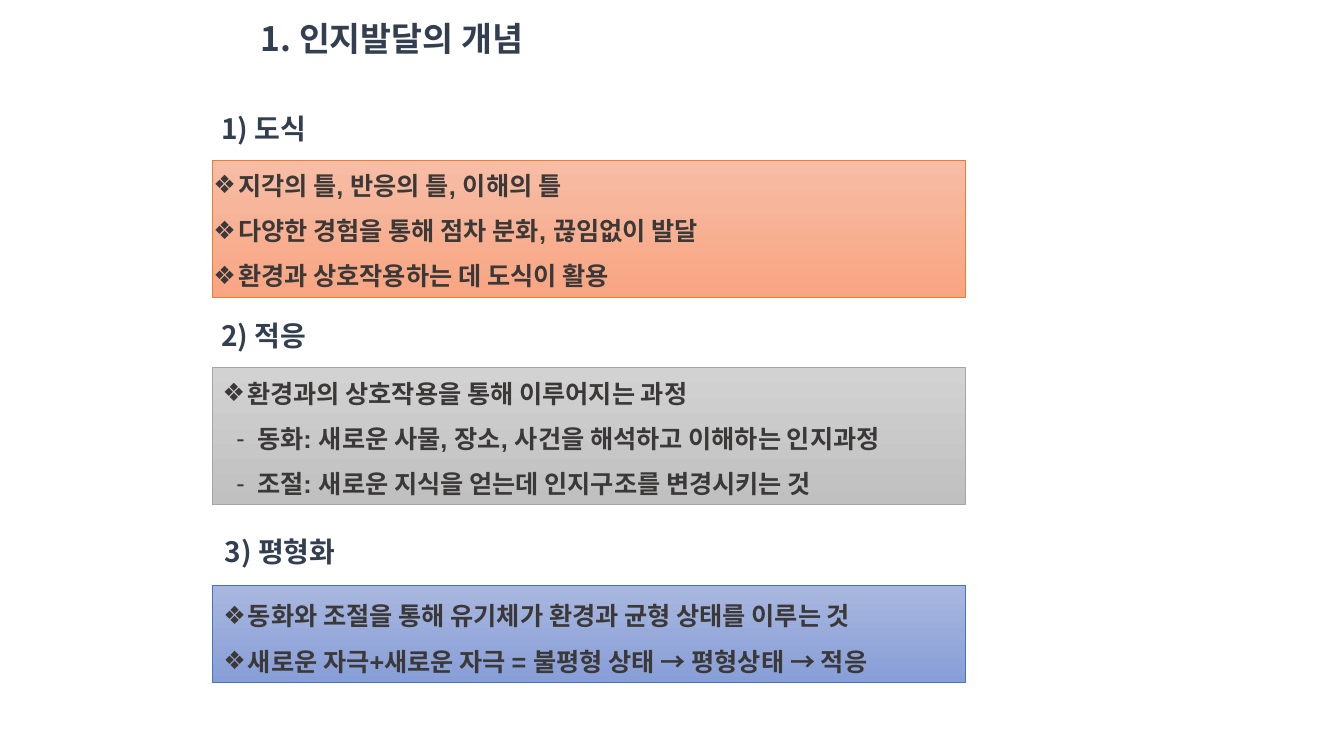
from lxml import etree
from pptx import Presentation
from pptx.dml.color import RGBColor
from pptx.enum.shapes import MSO_SHAPE
from pptx.enum.text import MSO_AUTO_SIZE
from pptx.oxml.ns import qn
from pptx.util import Cm, Pt

NAVY = RGBColor(0x33, 0x3F, 0x50)
CHARCOAL = RGBColor(0x3B, 0x38, 0x38)
ORANGE = RGBColor(0xED, 0x7D, 0x31)
ORANGE_TOP = RGBColor(0xF7, 0xBD, 0xA5)
ORANGE_END = RGBColor(0xF8, 0xA5, 0x82)
GRAY = RGBColor(0xA5, 0xA5, 0xA5)
GRAY_TOP = RGBColor(0xD2, 0xD2, 0xD2)
GRAY_END = RGBColor(0xC0, 0xC0, 0xC0)
BLUE = RGBColor(0x44, 0x72, 0xC4)
BLUE_TOP = RGBColor(0xA8, 0xB7, 0xDF)
BLUE_END = RGBColor(0x88, 0x9E, 0xD7)
KOREAN = "Noto Sans CJK KR"

# Bullet character: (text indent, hanging width) in cm
BULLETS = {"❖": (0.62, 0.62), "-": (0.87, 0.52)}


def add_text(left, top, width, height, lines, size, color, font):
    """Add a bold text box; each line is a (bullet or None, text) pair."""
    tb = s.shapes.add_textbox(Cm(left), Cm(top), Cm(width), Cm(height))
    tf = tb.text_frame
    tf.word_wrap = True
    tf.auto_size = MSO_AUTO_SIZE.SHAPE_TO_FIT_TEXT
    tf.text = "\n".join(text for _, text in lines)
    for p, (bullet, _) in zip(tf.paragraphs, lines):
        if bullet:
            p.line_spacing = 1.5
            set_bullet(p, bullet)
        r = p.runs[0]
        r.font.size = Pt(size)
        r.font.bold = True
        r.font.name = font
        r.font.color.rgb = color
        etree.SubElement(r.font._element, qn("a:ea"), typeface=KOREAN)


def set_bullet(p, char):
    indent, hanging = BULLETS[char]
    pPr = p._p.get_or_add_pPr()
    pPr.set("marL", str(Cm(indent)))
    pPr.set("indent", str(-Cm(hanging)))
    etree.SubElement(pPr, qn("a:buFont"), typeface="Arial")
    etree.SubElement(pPr, qn("a:buChar"), char=char)


prs = Presentation()
prs.slide_width, prs.slide_height = Cm(33.87), Cm(19.05)
s = prs.slides.add_slide(prs.slide_layouts[6])

add_text(6.32, 0.33, 16.2, 1.27, [(None, "1. 인지발달의 개념")], 24, NAVY, KOREAN)

# Heading and its place, panel top and height, text place and height, colours, lines
sections = [
    ("1) 도식", 5.33, 2.69, 4.04, 3.45, 5.13, 3.78, 3.71,
     (ORANGE, ORANGE_TOP, ORANGE_END),
     [("❖", "지각의 틀, 반응의 틀, 이해의 틀"),
      ("❖", "다양한 경험을 통해 점차 분화, 끊임없이 발달"),
      ("❖", "환경과 상호작용하는 데 도식이 활용")]),
    ("2) 적응", 5.33, 7.9, 9.27, 3.45, 5.36, 9.02, 3.71,
     (GRAY, GRAY_TOP, GRAY_END),
     [("❖", "환경과의 상호작용을 통해 이루어지는 과정"),
      ("-", "동화: 새로운 사물, 장소, 사건을 해석하고 이해하는 인지과정"),
      ("-", "조절: 새로운 지식을 얻는데 인지구조를 변경시키는 것")]),
    ("3) 평형화", 5.41, 13.34, 14.76, 2.44, 5.38, 14.63, 2.57,
     (BLUE, BLUE_TOP, BLUE_END),
     [("❖", "동화와 조절을 통해 유기체가 환경과 균형 상태를 이루는 것"),
      ("❖", "새로운 자극+새로운 자극 = 불평형 상태 → 평형상태 → 적응")]),
]

for (heading, head_left, head_top, panel_top, panel_height,
     text_left, text_top, text_height, colors, lines) in sections:
    edge, *shades = colors
    sp = s.shapes.add_shape(MSO_SHAPE.RECTANGLE, Cm(5.35), Cm(panel_top),
                            Cm(18.98), Cm(panel_height))
    sp.shadow.inherit = False
    sp.fill.gradient()
    sp.fill.gradient_angle = 270
    for stop, shade in zip(sp.fill.gradient_stops, shades):
        stop.color.rgb = shade
    sp.line.color.rgb = edge
    sp.line.width = Pt(0.5)

    add_text(head_left, head_top, 16.2, 1.12, [(None, heading)], 20, NAVY, KOREAN)
    add_text(text_left, text_top, 21.46, text_height, lines, 18, CHARCOAL, "Arial")

prs.save("out.pptx")
